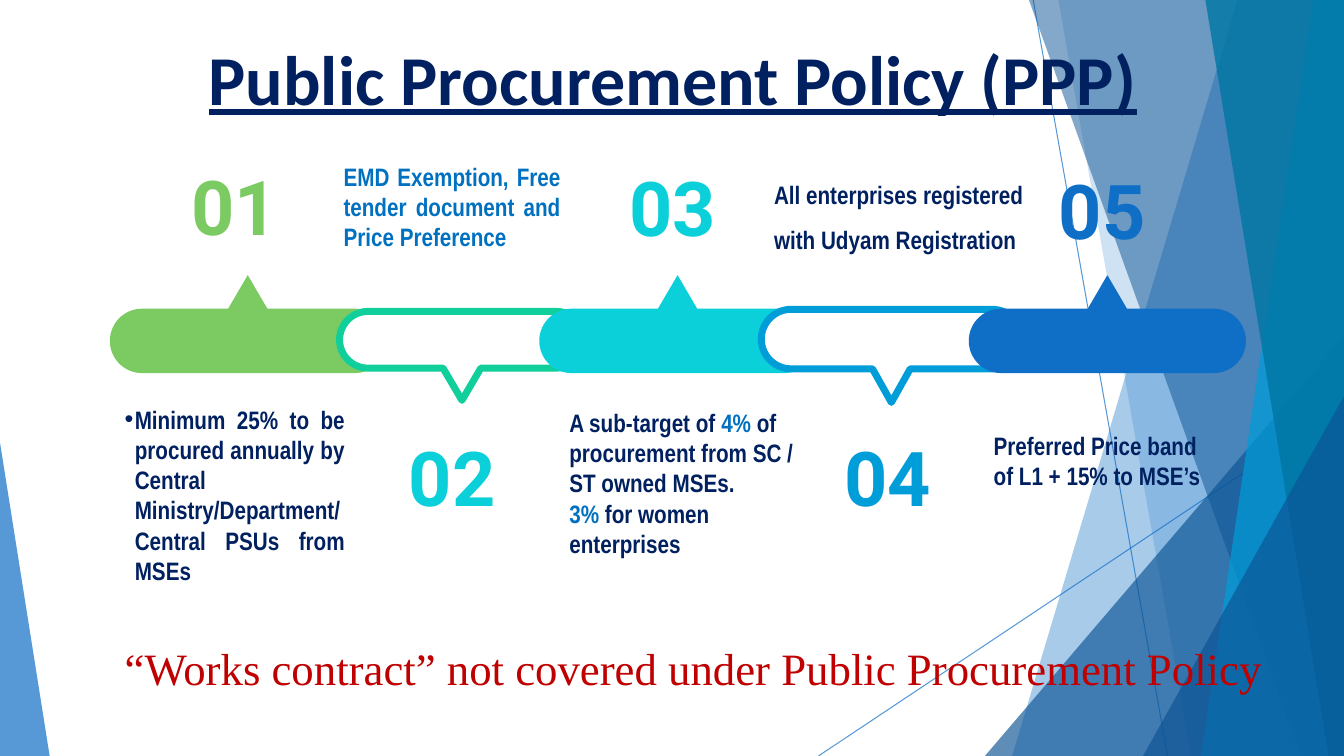
import math

from lxml import etree
from pptx import Presentation
from pptx.dml.color import RGBColor
from pptx.enum.shapes import MSO_CONNECTOR, MSO_SHAPE
from pptx.enum.text import MSO_ANCHOR, MSO_AUTO_SIZE, PP_ALIGN
from pptx.oxml.ns import qn
from pptx.util import Pt

STRAIGHT = MSO_CONNECTOR.STRAIGHT
TRIANGLE = MSO_SHAPE.ISOSCELES_TRIANGLE
MIDDLE = MSO_ANCHOR.MIDDLE
GROW = MSO_AUTO_SIZE.SHAPE_TO_FIT_TEXT
LEFT, CENTER, JUSTIFY = PP_ALIGN.LEFT, PP_ALIGN.CENTER, PP_ALIGN.JUSTIFY

WIDTH, HEIGHT = 960, 540
COLORS = {
    "white": "FFFFFF",
    "navy": "002060",
    "sky": "0070C0",
    "red": "C00000",
    "green": "7CCA62",
    "mint": "10CF9B",
    "cyan": "0BD0D9",
    "azure": "009DD9",
    "blue": "0F6FC6",
    "deep": "0B5394",
    "teal": "0076A3",
}
RGB = {name: RGBColor.from_string(value) for name, value in COLORS.items()}

presentation = Presentation()
presentation.slide_width = Pt(WIDTH)
presentation.slide_height = Pt(HEIGHT)
slide = presentation.slides.add_slide(presentation.slide_layouts[6])


def draw_outline(points, fill):
    corners = [(Pt(x), Pt(y)) for x, y in points]
    builder = slide.shapes.build_freeform(*corners[0], scale=1.0)
    builder.add_line_segments(corners[1:], close=True)
    shape = builder.convert_to_shape()
    shape.shadow.inherit = False
    shape.fill.solid()
    shape.fill.fore_color.rgb = RGB[fill]
    shape.line.fill.background()
    return shape


def add_text(box, lines, size, font, align=LEFT, bold=True):
    shape = slide.shapes.add_textbox(*[Pt(value) for value in box])
    frame = shape.text_frame
    frame.word_wrap = True
    frame.auto_size = GROW
    for index, line in enumerate(lines):
        paragraph = frame.add_paragraph() if index else frame.paragraphs[0]
        paragraph.alignment = align
        for text, color in line:
            run = paragraph.add_run()
            run.text = text
            run.font.name = font
            run.font.size = Pt(size)
            run.font.bold = bold
            run.font.color.rgb = RGB[color]
    return frame


backdrop = []
for ends in [(738, 0, 834, HEIGHT), (WIDTH, 290, 584.6, HEIGHT)]:
    line = slide.shapes.add_connector(STRAIGHT, *[Pt(value) for value in ends])
    line.line.color.rgb = RGB["blue"]
    line.line.width = Pt(0.75)
    etree.SubElement(line.element.spPr, qn("a:effectLst"))
    backdrop.append((line, 70))

# top_x, bottom_x, top_y, color, opacity
facets = [
    (884, 723, 0, "blue", 36),
    (756, 851, 0, "blue", 20),
    (WIDTH, 703.5, 240, "deep", 66),
    (735, 929.5, 0, "deep", 50),
    (938, 858, 0, "azure", 70),
    (861, 949, 0, "teal", 80),
    (WIDTH, 816.5, 283, "deep", 66),
    (0, 0, 316, "blue", 70),
]
for top_x, bottom_x, top_y, color, opacity in facets:
    if top_y:
        width = WIDTH - bottom_x if top_x else 35.5
        facet = slide.shapes.add_shape(
            TRIANGLE, Pt(bottom_x), Pt(top_y), Pt(width), Pt(HEIGHT - top_y))
        facet.adjustments[0] = 1 if top_x else 0
        facet.shadow.inherit = False
        facet.fill.solid()
        facet.fill.fore_color.rgb = RGB[color]
        facet.line.fill.background()
    else:
        facet = draw_outline(
            [(top_x, 0), (WIDTH, 0), (WIDTH, HEIGHT), (bottom_x, HEIGHT)], color)
    backdrop.append((facet, opacity))

for shape, opacity in backdrop:
    for color in shape.element.iter(qn("a:srgbClr")):
        etree.SubElement(color, qn("a:alpha"), val=str(opacity * 1000))

title = add_text((25, 26.6, 911.5, 57), [[("Public Procurement Policy (PPP)", "navy")]],
                 50, "Calibri", CENTER)
title.auto_size = MSO_AUTO_SIZE.NONE
title.vertical_anchor = MIDDLE
title.paragraphs[0].space_before = Pt(10)
title.paragraphs[0].runs[0].font.underline = True

# left, right, top, bottom, tip_x, tip_y, fill, outline
capsules = [
    (78.5, 276.5, 220.5, 266.5, 177, 196.5, "green", None),
    (242.6, 417.6, 222.5, 263, 330, 286, "white", "mint"),
    (385.2, 583.2, 220.5, 266.5, 484, 196.5, "cyan", None),
    (543.8, 730, 221, 263.5, 636.7, 287.5, "white", "azure"),
    (692, 890, 220.5, 266.5, 791, 196.5, "blue", None),
]
for left, right, top, bottom, tip_x, tip_y, fill, outline in capsules:
    radius = (bottom - top) / 2
    middle = top + radius
    angles = [math.radians(degrees) for degrees in range(-90, 91, 6)]
    right_end = [(right - radius + radius * math.cos(a), middle + radius * math.sin(a))
                 for a in angles]
    left_end = [(left + radius - radius * math.cos(a), middle - radius * math.sin(a))
                for a in angles]
    if tip_y < top:
        pointer = [(tip_x - 14, top), (tip_x, tip_y), (tip_x + 14, top)]
        points = pointer + right_end + left_end
    else:
        pointer = [(tip_x + 13.5, bottom), (tip_x, tip_y), (tip_x - 13.5, bottom)]
        points = right_end + pointer + left_end
    capsule = draw_outline(points, fill)
    if outline:
        capsule.line.color.rgb = RGB[outline]
        capsule.line.width = Pt(5)
        etree.SubElement(capsule.element.spPr.find(qn("a:ln")), qn("a:round"))

numbers = [
    ("01", 127.5, 111, "green"),
    ("02", 283, 304, "cyan"),
    ("03", 440.6, 111.6, "cyan"),
    ("04", 594, 304, "azure"),
    ("05", 747.4, 113.8, "blue"),
]
for number, left, top, color in numbers:
    add_text((left, top, 80, 72.7), [[(number, color)]], 54, "Roboto", CENTER)

minimum = add_text(
    (82, 285, 171.4, 138),
    [[("Minimum 25% to be procured annually by Central Ministry/Department/ "
       "Central PSUs from MSEs", "navy")]],
    18, "Arial Narrow", JUSTIFY)
bullet_format = minimum.paragraphs[0]._p.get_or_add_pPr()
bullet_format.set("marL", str(Pt(7.2)))
bullet_format.set("indent", str(Pt(-7.2)))
etree.SubElement(bullet_format, qn("a:buFont"), typeface="Arial")
etree.SubElement(bullet_format, qn("a:buChar"), char="•")

add_text((238.3, 111.6, 169.2, 72.7),
         [[("EMD Exemption, Free tender document and Price Preference", "sky")]],
         18, "Arial Narrow", JUSTIFY)

add_text((399.6, 287.3, 183.6, 116.6),
         [[("A sub-target of ", "navy"), ("4% ", "sky"),
           ("of procurement from SC / ST owned MSEs.", "navy")],
          [("3% ", "sky"), ("for women enterprises", "navy")]],
         18, "Arial Narrow")

registered = add_text((545.8, 113.8, 198, 72.7),
                      [[("All enterprises registered", "navy")],
                       [("with Udyam Registration", "navy")]],
                      18, "Arial Narrow", JUSTIFY)
for paragraph in registered.paragraphs:
    paragraph.line_spacing = 1.5

add_text((702.7, 303.8, 169.2, 51),
         [[("Preferred Price band of L1 + 15% to MSE’s", "navy")]],
         18, "Arial Narrow")

add_text((82, 454.3, 840.2, 46),
         [[("“Works contract” not covered under Public Procurement Policy", "red")]],
         32, "Times New Roman", JUSTIFY, bold=False)

presentation.save("out.pptx")
